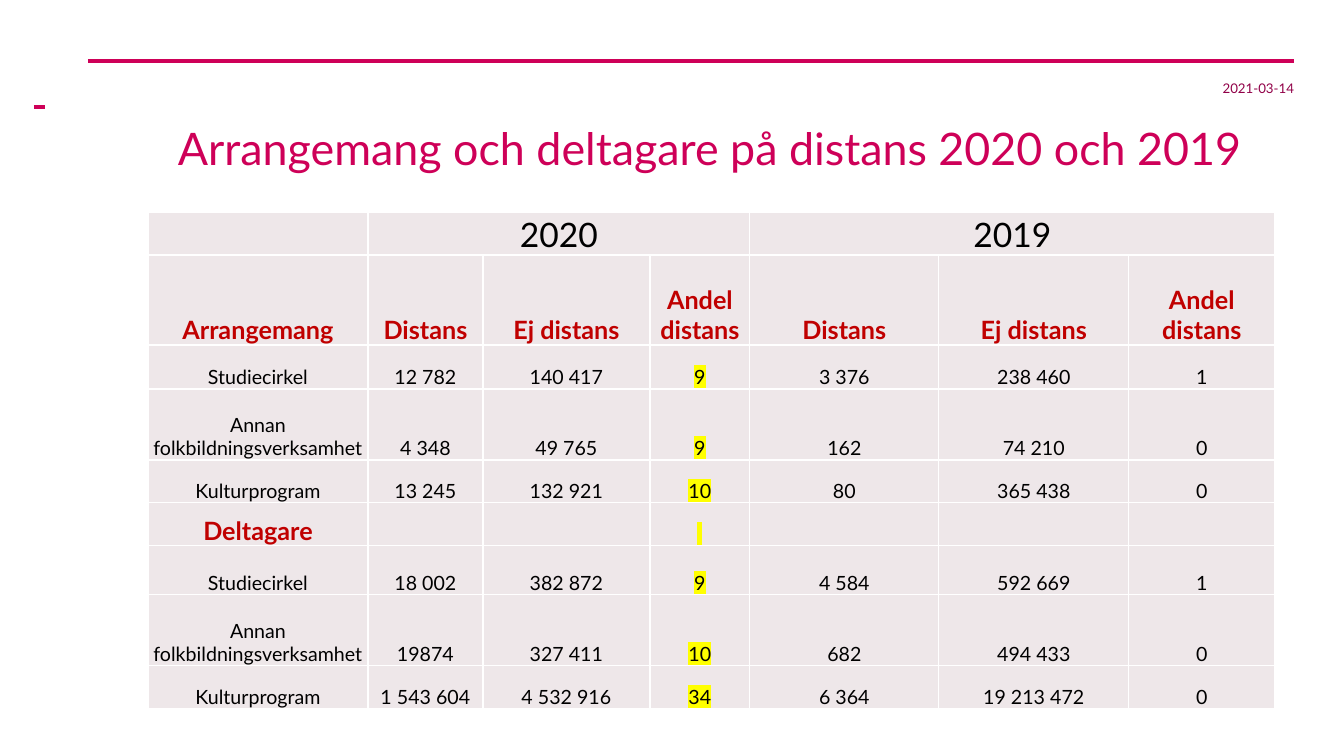
from lxml.etree import SubElement
from pptx import Presentation
from pptx.dml.color import RGBColor
from pptx.enum.shapes import MSO_CONNECTOR
from pptx.enum.text import MSO_ANCHOR, PP_ALIGN
from pptx.oxml import parse_xml
from pptx.oxml.ns import nsdecls, qn
from pptx.util import Pt

# Content
TITLE = "Arrangemang och deltagare på distans 2020 och 2019"
DATE = "2021-03-14"
YEARS = ["2020", "2019"]
MEASURES = ["Distans", "Ej distans", "Andel distans"]
ROWS = [
    ["", YEARS[0], "", "", YEARS[1], "", ""],
    ["Arrangemang"] + MEASURES * len(YEARS),
    ["Studiecirkel", "12 782", "140 417", "9", "3 376", "238 460", "1"],
    ["Annan folkbildningsverksamhet", "4 348", "49 765", "9", "162", "74 210", "0"],
    ["Kulturprogram", "13 245", "132 921", "10", "80", "365 438", "0"],
    ["Deltagare", "", "", " ", "", "", ""],
    ["Studiecirkel", "18 002", "382 872", "9", "4 584", "592 669", "1"],
    ["Annan folkbildningsverksamhet", "19874", "327 411", "10", "682", "494 433", "0"],
    ["Kulturprogram", "1 543 604", "4 532 916", "34", "6 364", "19 213 472", "0"],
]
YEAR_ROW, HEADING_ROWS = 0, (1, 5)
SHARE_2020 = 3  # highlighted column

# Layout in px
SCALE = 914400 / 100.8
COLUMN_WIDTHS = [220, 115, 167, 100, 189, 190, 146]
ROW_HEIGHTS = [43, 90, 44, 71, 43, 43, 49, 71, 43]
RULES = [(88, 61, 1294), (34, 107, 45)]  # left, y, right

FONT = "Lato"
MAGENTA = RGBColor(0xCE, 0x00, 0x58)
PLUM = RGBColor(0x91, 0x00, 0x48)
RED = RGBColor(0xC0, 0x00, 0x00)
BLACK = RGBColor(0x00, 0x00, 0x00)
WHITE = RGBColor(0xFF, 0xFF, 0xFF)
CELL_GREY = RGBColor(0xEE, 0xE7, 0xE9)
YELLOW = RGBColor(0xFF, 0xFF, 0x00)


def px(length):
    return round(length * SCALE)


def add_run(paragraph, text, size, color, bold=False):
    run = paragraph.add_run()
    run.text = text
    run.font.name = FONT
    run.font.size = Pt(size)
    run.font.bold = bold
    run.font.color.rgb = color
    return run


def add_text(slide, box, text, size, color, align, anchor):
    frame = slide.shapes.add_textbox(*map(px, box)).text_frame
    frame.word_wrap = True
    frame.vertical_anchor = anchor
    frame.margin_left = frame.margin_right = frame.margin_top = frame.margin_bottom = 0
    paragraph = frame.paragraphs[0]
    paragraph.alignment = align
    add_run(paragraph, text, size, color)
    return paragraph


def highlight(run):
    mark = parse_xml(f'<a:highlight {nsdecls("a")}><a:srgbClr val="{YELLOW}"/></a:highlight>')
    run.font._rPr.find(qn("a:solidFill")).addnext(mark)


def add_borders(cell):
    properties = cell._tc.get_or_add_tcPr()
    for index, side in enumerate("LRTB"):
        properties.insert(index, parse_xml(
            f'<a:ln{side} {nsdecls("a")} w="{Pt(1)}"><a:solidFill>'
            f'<a:srgbClr val="{WHITE}"/></a:solidFill></a:ln{side}>'))


def text_style(row):
    if row == YEAR_ROW:
        return 24, BLACK, False
    if row in HEADING_ROWS:
        return 18, RED, True
    return 14, BLACK, False


def fill_cell(cell, text, row, column):
    cell.fill.solid()
    cell.fill.fore_color.rgb = CELL_GREY
    add_borders(cell)
    cell.vertical_anchor = MSO_ANCHOR.BOTTOM
    cell.margin_left = cell.margin_right = cell.margin_top = px(1)
    cell.margin_bottom = 0
    paragraph = cell.text_frame.paragraphs[0]
    paragraph.alignment = PP_ALIGN.CENTER
    if not text:
        paragraph.font.size = Pt(14)
        return
    is_share = column == SHARE_2020 and row > HEADING_ROWS[0]
    run = add_run(paragraph, text, *((14, BLACK) if is_share else text_style(row)))
    if is_share:
        highlight(run)


def main():
    deck = Presentation()
    deck.slide_width, deck.slide_height = px(1344), px(756)
    slide = deck.slides.add_slide(deck.slide_layouts[6])

    # Rules at the top
    for left, y, right in RULES:
        rule = slide.shapes.add_connector(
            MSO_CONNECTOR.STRAIGHT, px(left), px(y), px(right), px(y))
        rule.line.color.rgb = MAGENTA
        rule.line.width = Pt(2.25)
        SubElement(rule._element.spPr, qn("a:effectLst"))

    # Title and date
    title = add_text(slide, (178, 127, 1115, 103), TITLE, 32, MAGENTA,
                     PP_ALIGN.LEFT, MSO_ANCHOR.TOP)
    title.line_spacing = 0.9
    add_text(slide, (1175, 71, 119, 35), DATE, 9.5, PLUM, PP_ALIGN.RIGHT, MSO_ANCHOR.MIDDLE)

    # Table of events and participants
    table = slide.shapes.add_table(
        len(ROWS), len(COLUMN_WIDTHS), px(148), px(212),
        px(sum(COLUMN_WIDTHS)), px(sum(ROW_HEIGHTS))).table
    table.first_row = table.horz_banding = False
    for column, width in zip(table.columns, COLUMN_WIDTHS):
        column.width = px(width)
    for row, height in zip(table.rows, ROW_HEIGHTS):
        row.height = px(height)
    for r, texts in enumerate(ROWS):
        for c, text in enumerate(texts):
            fill_cell(table.cell(r, c), text, r, c)
    for year in range(len(YEARS)):
        first = 1 + year * len(MEASURES)
        table.cell(YEAR_ROW, first).merge(table.cell(YEAR_ROW, first + len(MEASURES) - 1))

    deck.save("out.pptx")


if __name__ == "__main__":
    main()
